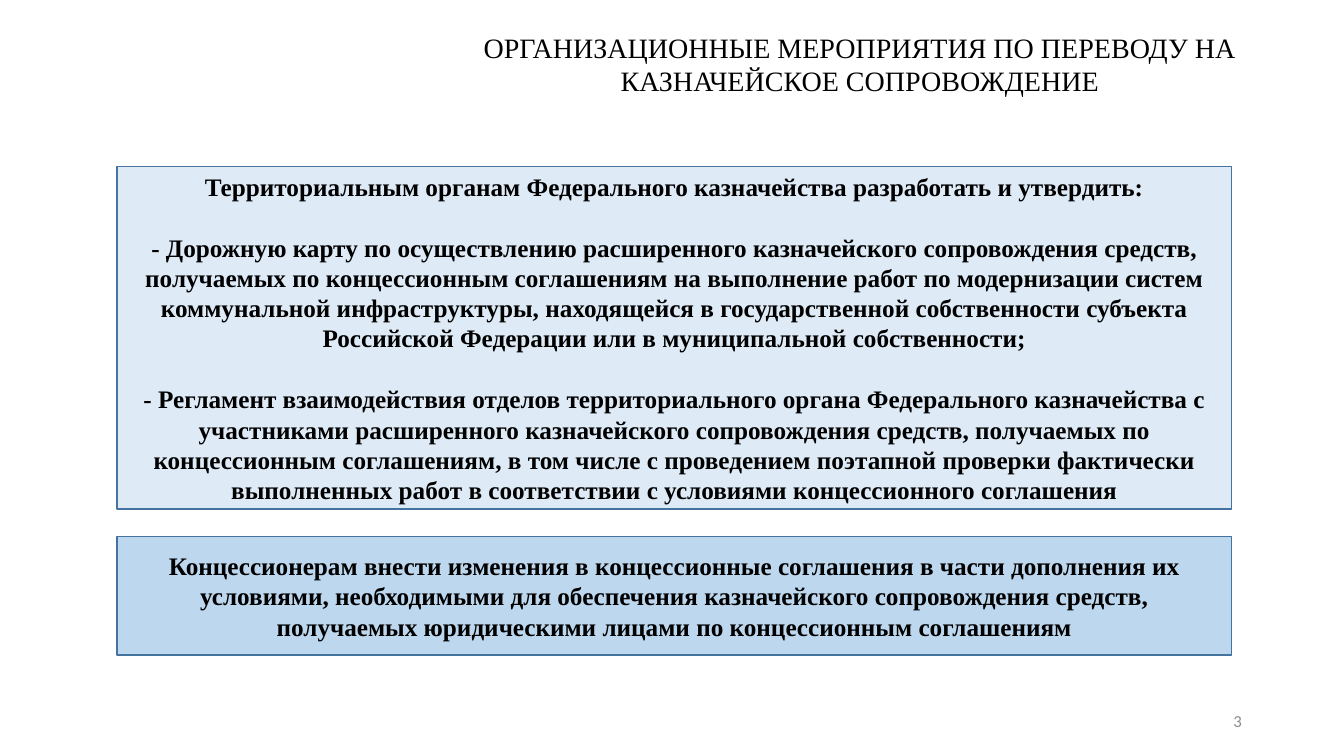
from dataclasses import dataclass

import pptx
import pptx.dml.color
import pptx.enum.shapes
import pptx.enum.text
import pptx.oxml
import pptx.oxml.ns
import pptx.shapes.autoshape
import pptx.text.text
import pptx.util

ALIGN = pptx.enum.text.PP_ALIGN
ANCHOR = pptx.enum.text.MSO_ANCHOR
RGB = pptx.dml.color.RGBColor
COLUMNS, ROWS = 160, 90
SLIDE_WIDTH, SLIDE_HEIGHT = pptx.util.Inches(13.33), pptx.util.Inches(7.5)


@dataclass(frozen=True)
class Theme:
    text: str = "000000"
    muted: str = "8C8C8C"
    outline: str = "43739E"
    light_fill: str = "DEEBF7"
    strong_fill: str = "BDD7EE"
    font: str = "Times New Roman"
    number_font: str = "Calibri"
    title_size: int = 20
    body_size: int = 18
    number_size: int = 12
    paragraph_gap: int = 22


@dataclass(frozen=True)
class Frame:
    """Position and size in grid columns and rows."""

    column: float
    row: float
    columns: float
    rows: float

    def lengths(self) -> tuple[int, int, int, int]:
        column_width, row_height = SLIDE_WIDTH / COLUMNS, SLIDE_HEIGHT / ROWS
        return (
            round(self.column * column_width),
            round(self.row * row_height),
            round(self.columns * column_width),
            round(self.rows * row_height),
        )


@dataclass(frozen=True)
class Panel:
    frame: Frame
    fill: str
    paragraphs: tuple[str, ...]


THEME = Theme()
TITLE = "ОРГАНИЗАЦИОННЫЕ МЕРОПРИЯТИЯ ПО ПЕРЕВОДУ НА КАЗНАЧЕЙСКОЕ СОПРОВОЖДЕНИЕ"
TITLE_FRAME = Frame(49.92, 3, 104.88, 9.24)
NUMBER_FRAME = Frame(113.04, 83.4, 36, 4.8)
PANEL_COLUMN, PANEL_COLUMNS = 13.92, 132.72

AUTHORITIES = Panel(
    Frame(PANEL_COLUMN, 19.8, PANEL_COLUMNS, 40.8),
    THEME.light_fill,
    (
        "Территориальным органам Федерального казначейства разработать и утвердить:",
        "- Дорожную карту по осуществлению расширенного казначейского сопровождения "
        "средств, получаемых по концессионным соглашениям на выполнение работ по "
        "модернизации систем коммунальной инфраструктуры, находящейся в "
        "государственной собственности субъекта Российской Федерации или в "
        "муниципальной собственности;",
        "- Регламент взаимодействия отделов территориального органа Федерального "
        "казначейства с участниками расширенного казначейского сопровождения средств, "
        "получаемых по концессионным соглашениям, в том числе с проведением поэтапной "
        "проверки фактически выполненных работ в соответствии с условиями "
        "концессионного соглашения",
    ),
)
CONCESSIONAIRES = Panel(
    Frame(PANEL_COLUMN, 63.84, PANEL_COLUMNS, 14.16),
    THEME.strong_fill,
    (
        "Концессионерам внести изменения в концессионные соглашения в части дополнения "
        "их условиями, необходимыми для обеспечения казначейского сопровождения "
        "средств, получаемых юридическими лицами по концессионным соглашениям",
    ),
)


def place(shape: pptx.shapes.autoshape.Shape, frame: Frame) -> None:
    shape.left, shape.top, shape.width, shape.height = frame.lengths()


def remove_bullet(paragraph: pptx.text.text._Paragraph) -> None:
    properties = paragraph._p.get_or_add_pPr()
    properties.set("marL", "0")
    properties.set("indent", "0")
    properties.append(pptx.oxml.parse_xml(f"<a:buNone {pptx.oxml.ns.nsdecls('a')}/>"))


def write_text(
    shape: pptx.shapes.autoshape.Shape,
    *texts: str,
    size: int,
    font: str = THEME.font,
    color: str = THEME.text,
    bold: bool = False,
    align: ALIGN = ALIGN.CENTER,
    anchor: ANCHOR = ANCHOR.MIDDLE,
    gap: int = 0,
) -> None:
    text_frame = shape.text_frame
    text_frame.word_wrap = True
    text_frame.auto_size = pptx.enum.text.MSO_AUTO_SIZE.NONE
    text_frame.vertical_anchor = anchor
    for index, text in enumerate(texts):
        paragraph = text_frame.paragraphs[0] if index == 0 else text_frame.add_paragraph()
        remove_bullet(paragraph)
        paragraph.alignment = align
        paragraph.space_before = pptx.util.Pt(gap if index else 0)
        run = paragraph.add_run()
        run.text = text
        run.font.name = font
        run.font.size = pptx.util.Pt(size)
        run.font.bold = bold
        run.font.color.rgb = RGB.from_string(color)


def draw_panel(shape: pptx.shapes.autoshape.Shape, panel: Panel) -> None:
    place(shape, panel.frame)
    shape.shadow.inherit = False
    shape.fill.solid()
    shape.fill.fore_color.rgb = RGB.from_string(panel.fill)
    shape.line.color.rgb = RGB.from_string(THEME.outline)
    shape.line.width = pptx.util.Pt(1)
    write_text(shape, *panel.paragraphs, size=THEME.body_size, bold=True,
               gap=THEME.paragraph_gap)


def main() -> None:
    presentation = pptx.Presentation()
    presentation.slide_width, presentation.slide_height = SLIDE_WIDTH, SLIDE_HEIGHT
    slide = presentation.slides.add_slide(presentation.slide_layouts[1])

    title = slide.shapes.title
    place(title, TITLE_FRAME)
    write_text(title, TITLE, size=THEME.title_size, anchor=ANCHOR.TOP)

    draw_panel(slide.placeholders[1], AUTHORITIES)
    rectangle = slide.shapes.add_shape(
        pptx.enum.shapes.MSO_SHAPE.RECTANGLE, *CONCESSIONAIRES.frame.lengths()
    )
    draw_panel(rectangle, CONCESSIONAIRES)

    number = slide.shapes.add_textbox(*NUMBER_FRAME.lengths())
    write_text(number, "3", size=THEME.number_size, font=THEME.number_font,
               color=THEME.muted, align=ALIGN.RIGHT)

    presentation.save("out.pptx")


if __name__ == "__main__":
    main()
